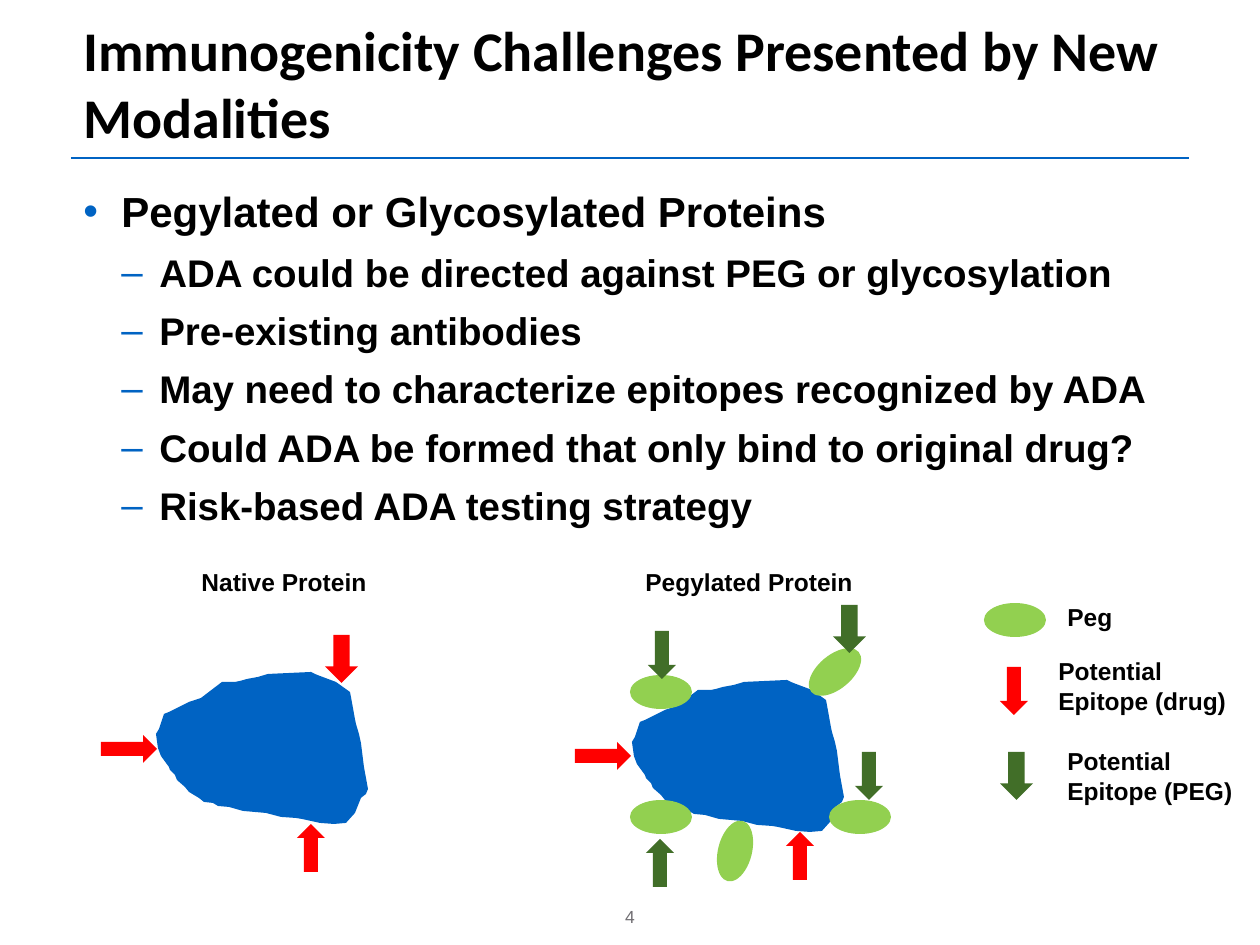
from lxml.etree import SubElement
from pptx import Presentation
from pptx.dml.color import RGBColor
from pptx.enum.shapes import MSO_CONNECTOR, MSO_SHAPE
from pptx.enum.text import MSO_ANCHOR, PP_ALIGN
from pptx.oxml.ns import qn
from pptx.util import Emu, Pt

PX = 914400 / 126
COLORS = {
    "blue": "0063C3",
    "peg": "92D050",
    "peg_epitope": "416E28",
    "drug_epitope": "FF0000",
    "text": "000000",
    "number": "716F73",
}

PROTEIN_OUTLINE = [
    (66, 10), (45, 26), (33, 30), (19, 37), (13, 40), (8, 42), (3, 57), (0, 62),
    (2, 76), (5, 84), (13, 95), (14, 98), (19, 103), (21, 108), (29, 115),
    (33, 120), (43, 126), (48, 130), (57, 131), (62, 134), (73, 135), (87, 139),
    (110, 141), (125, 145), (140, 146), (146, 147), (164, 151), (178, 152),
    (190, 151), (199, 141), (205, 126), (210, 122), (212, 117), (208, 95),
    (205, 71), (203, 62), (200, 52), (199, 47), (195, 25), (194, 20), (180, 10),
    (164, 4), (159, 2), (155, 0), (112, 2), (102, 5), (91, 7), (84, 9), (79, 10),
]

BODY = [
    ("Pegylated or Glycosylated Proteins", 0),
    ("ADA could be directed against PEG or glycosylation", 1),
    ("Pre-existing antibodies", 1),
    ("May need to characterize epitopes recognized by ADA", 1),
    ("Could ADA be formed that only bind to original drug?", 1),
    ("Risk-based ADA testing strategy", 1),
]

PEGS = [
    (630, 800, 0), (630, 675, 0), (804, 655, 320),
    (829, 800, 0), (984, 603, 0), (704, 834, 104),
]

ARROWS = {
    "drug_epitope": [
        (MSO_SHAPE.DOWN_ARROW, 325, 635, 33, 48),
        (MSO_SHAPE.RIGHT_ARROW, 101, 735, 56, 28),
        (MSO_SHAPE.UP_ARROW, 297, 824, 28, 48),
        (MSO_SHAPE.RIGHT_ARROW, 575, 742, 56, 28),
        (MSO_SHAPE.UP_ARROW, 786, 832, 28, 48),
        (MSO_SHAPE.DOWN_ARROW, 1000, 667, 28, 48),
    ],
    "peg_epitope": [
        (MSO_SHAPE.UP_ARROW, 646, 839, 28, 48),
        (MSO_SHAPE.DOWN_ARROW, 648, 631, 28, 48),
        (MSO_SHAPE.DOWN_ARROW, 833, 605, 33, 48),
        (MSO_SHAPE.DOWN_ARROW, 855, 752, 28, 48),
        (MSO_SHAPE.DOWN_ARROW, 1000, 752, 33, 48),
    ],
}

LABELS = [
    ("Native Protein", 189, 561, 195, 43),
    ("Pegylated Protein", 633, 561, 236, 43),
    ("Peg", 1055, 596, 71, 43),
    ("Potential\nEpitope (drug)", 1046, 650, 194, 72),
    ("Potential\nEpitope (PEG)", 1055, 740, 205, 72),
]


def px(n):
    return Emu(round(n * PX))


def rgb(name):
    return RGBColor.from_string(COLORS[name])


class SlideBuilder:
    def __init__(self, slide):
        self.shapes = slide.shapes

    def paint(self, shape, color):
        shape.shadow.inherit = False
        shape.fill.solid()
        shape.fill.fore_color.rgb = rgb(color)
        shape.line.fill.background()

    def shape(self, kind, x, y, w, h, color, rotation=0):
        shape = self.shapes.add_shape(kind, px(x), px(y), px(w), px(h))
        shape.rotation = rotation
        self.paint(shape, color)

    def outline(self, points, x, y, color):
        builder = self.shapes.build_freeform(*points[0], scale=PX)
        builder.add_line_segments(points[1:], close=True)
        self.paint(builder.convert_to_shape(px(x), px(y)), color)

    def rule(self, x1, y1, x2, y2):
        line = self.shapes.add_connector(
            MSO_CONNECTOR.STRAIGHT, px(x1), px(y1), px(x2), px(y2))
        line.line.color.rgb = rgb("blue")
        line.line.width = Pt(1)
        SubElement(line._element.spPr, qn("a:effectLst"))

    def style(self, paragraph, size, font="Arial", color="text", bold=True):
        for run in paragraph.runs:
            run.font.size = Pt(size)
            run.font.name = font
            run.font.bold = bold
            run.font.color.rgb = rgb(color)

    def text(self, words, x, y, w, h, size=14, font="Arial", color="text",
             bold=True, anchor=MSO_ANCHOR.TOP, align=PP_ALIGN.LEFT, wrap=False):
        frame = self.shapes.add_textbox(px(x), px(y), px(w), px(h)).text_frame
        frame.word_wrap = wrap
        frame.vertical_anchor = anchor
        frame.text = words
        for paragraph in frame.paragraphs:
            paragraph.alignment = align
            self.style(paragraph, size, font, color, bold)

    def bullets(self, items, x, y, w, h):
        frame = self.shapes.add_textbox(px(x), px(y), px(w), px(h)).text_frame
        frame.word_wrap = True
        frame.margin_top = px(10)
        frame.text = "\n".join(words for words, _ in items)
        for index, (paragraph, (_, level)) in enumerate(zip(frame.paragraphs, items)):
            paragraph.level = level
            paragraph.space_before = Pt(7 if index else 0)
            props = paragraph._p.get_or_add_pPr()
            props.set("marL", str(px(38 * (level + 1))))
            props.set("indent", str(-px(38)))
            bullet_color = SubElement(props, qn("a:buClr"))
            SubElement(bullet_color, qn("a:srgbClr"), val=COLORS["blue"])
            SubElement(props, qn("a:buFont"), typeface="Arial")
            SubElement(props, qn("a:buChar"), char="•–"[level])
            self.style(paragraph, 24 - 2 * level)


def main():
    deck = Presentation()
    deck.slide_width, deck.slide_height = px(1260), px(945)
    page = SlideBuilder(deck.slides.add_slide(deck.slide_layouts[6]))

    page.rule(71, 158, 1189, 158)
    page.text("4", 499, 883, 262, 50, size=10, color="number", bold=False,
              anchor=MSO_ANCHOR.BOTTOM, align=PP_ALIGN.CENTER, wrap=True)
    page.text("Immunogenicity Challenges Presented by New Modalities",
              71, 5, 1119, 151, size=32, font="Calibri",
              anchor=MSO_ANCHOR.BOTTOM, wrap=True)
    page.bullets(BODY, 71, 176, 1119, 350)

    for x, y in [(156, 672), (632, 680)]:
        page.outline(PROTEIN_OUTLINE, x, y, "blue")
    for x, y, rotation in PEGS:
        page.shape(MSO_SHAPE.OVAL, x, y, 62, 34, "peg", rotation)
    for color, arrows in ARROWS.items():
        for arrow in arrows:
            page.shape(*arrow, color)
    for label in LABELS:
        page.text(*label)

    deck.save("out.pptx")


if __name__ == "__main__":
    main()
